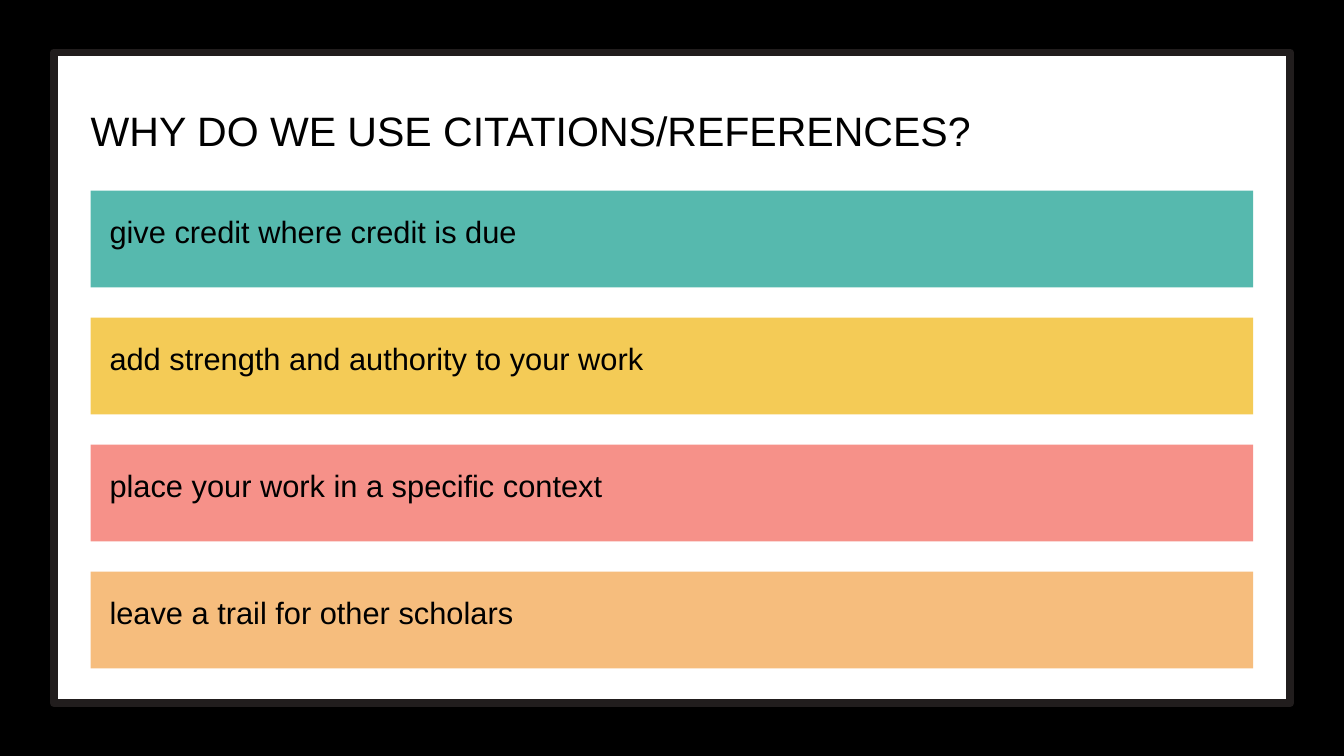
"""Build a slide listing four reasons for using citations and references."""
from pptx import Presentation
from pptx.dml.color import RGBColor
from pptx.enum.shapes import MSO_SHAPE
from pptx.enum.text import MSO_ANCHOR
from pptx.util import Cm, Pt

RECTANGLE = MSO_SHAPE.RECTANGLE
TOP, MIDDLE = MSO_ANCHOR.TOP, MSO_ANCHOR.MIDDLE
COLORS = {
    "black": "000000",
    "white": "FFFFFF",
    "frame": "211D1D",
    "teal": "56B9AE",
    "yellow": "F4CB56",
    "pink": "F69189",
    "orange": "F6BD7D",
}
REASONS = [
    ("give credit where credit is due", "teal"),
    ("add strength and authority to your work", "yellow"),
    ("place your work in a specific context", "pink"),
    ("leave a trail for other scholars", "orange"),
]
LEFT, BAR_WIDTH, BAR_HEIGHT = 3.43, 43.94, 3.66
FIRST_BAR_TOP, BAR_STEP, TEXT_RISE = 7.21, 4.8, 0.81

presentation = Presentation()
presentation.slide_width, presentation.slide_height = Cm(50.8), Cm(28.58)
slide = presentation.slides.add_slide(presentation.slide_layouts[6])
slide.background.fill.solid()
slide.background.fill.fore_color.rgb = RGBColor.from_string(COLORS["black"])


def add_rectangle(left, top, width, height, color):
    shape = slide.shapes.add_shape(RECTANGLE, Cm(left), Cm(top), Cm(width), Cm(height))
    shape.shadow.inherit = False
    shape.fill.solid()
    shape.fill.fore_color.rgb = RGBColor.from_string(COLORS[color])
    shape.line.fill.background()
    return shape


def add_text(text, *, top, width, height, size, spacing, inset=0, anchor=TOP):
    box = slide.shapes.add_textbox(Cm(LEFT), Cm(top), Cm(width), Cm(height))
    frame = box.text_frame
    frame.word_wrap = True
    frame.vertical_anchor = anchor
    frame.margin_left = frame.margin_right = Cm(inset)
    frame.margin_top = frame.margin_bottom = Cm(inset)
    paragraph = frame.paragraphs[0]
    paragraph.line_spacing = Pt(spacing)
    run = paragraph.add_run()
    run.text = text
    run.font.name = "Arial"
    run.font.size = Pt(size)
    run.font.color.rgb = RGBColor.from_string(COLORS["black"])


panel = add_rectangle(2.03, 1.98, 46.74, 24.61, "white")
panel.line.color.rgb = RGBColor.from_string(COLORS["frame"])
panel.line.width = Pt(8.25)

for index, (reason, color) in enumerate(REASONS):
    bar_top = FIRST_BAR_TOP + index * BAR_STEP
    add_rectangle(LEFT, bar_top, BAR_WIDTH, BAR_HEIGHT, color)
    add_text(reason, top=bar_top - TEXT_RISE, width=BAR_WIDTH,
             height=BAR_HEIGHT + TEXT_RISE, size=33, spacing=46.2,
             inset=0.71, anchor=MIDDLE)

add_text("WHY DO WE USE CITATIONS/REFERENCES?", top=2.84, width=47.37,
         height=2.72, size=44, spacing=85.4)

presentation.save("out.pptx")
